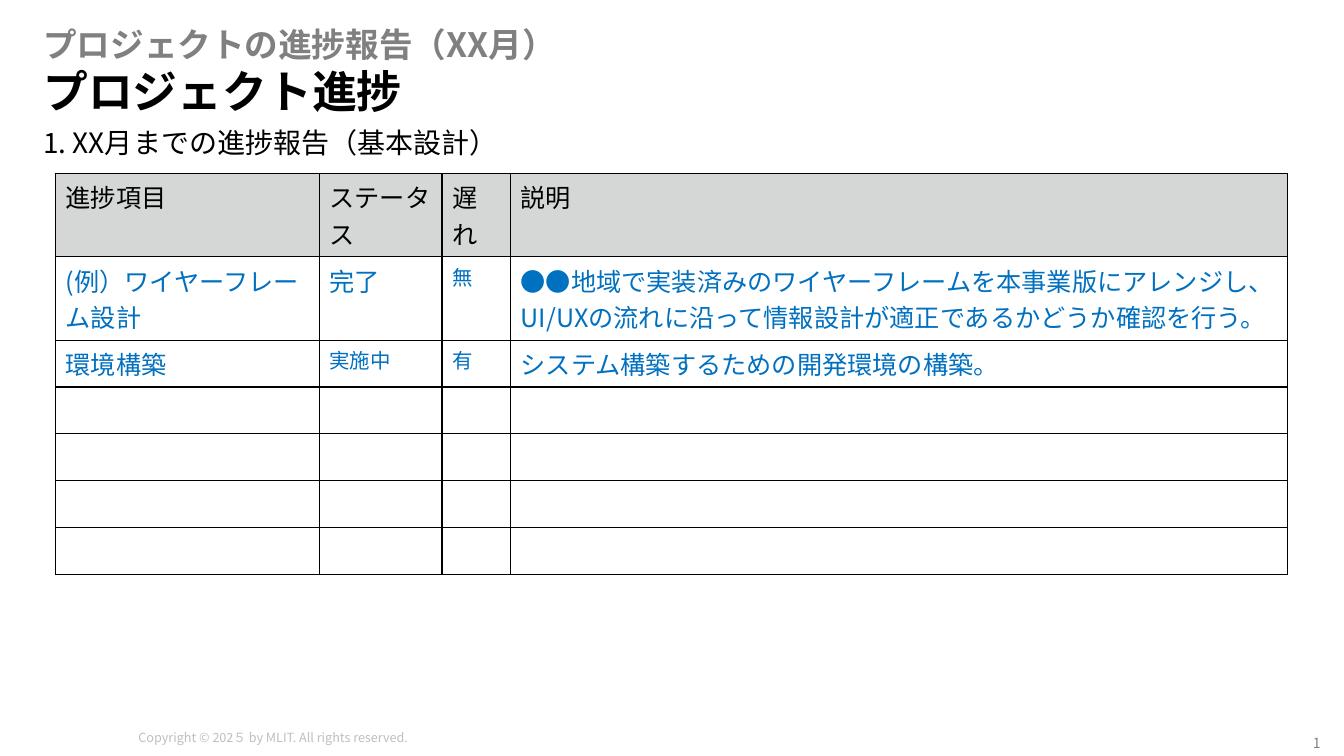
"""Build the monthly project progress report slide."""
from dataclasses import dataclass

from lxml.etree import SubElement
from pptx import Presentation
from pptx.dml.color import RGBColor
from pptx.enum.text import MSO_ANCHOR as Anchor, PP_ALIGN as Align
from pptx.oxml import parse_xml
from pptx.oxml.ns import nsdecls, qn
from pptx.util import Cm, Pt

FONT = "Noto Sans CJK JP"
BLACK = RGBColor(0x00, 0x00, 0x00)
GRAY = RGBColor(0x80, 0x80, 0x80)
LIGHT_GRAY = RGBColor(0xBF, 0xBF, 0xBF)
HEADER_GRAY = RGBColor(0xD5, 0xD7, 0xD7)
BLUE = RGBColor(0x00, 0x70, 0xC0)

LEFT, WIDTH = 0.84, 31.6
TABLE_LEFT, TABLE_TOP = 1.4, 4.37
COLUMN_WIDTHS = (6.65, 3.09, 1.73, 19.57)
ROW_HEIGHTS = (2.1,) * 2 + (1.18,) * 5
BODY_SIZE, SMALL_SIZE = 18, 14.6
SMALL_TEXTS = {"無", "実施中", "有"}
ROWS = [
    ("進捗項目", "ステータス", "遅れ", "説明"),
    ("(例）ワイヤーフレーム設計", "完了", "無",
     "●●地域で実装済みのワイヤーフレームを本事業版にアレンジし、"
     "UI/UXの流れに沿って情報設計が適正であるかどうか確認を行う。"),
    ("環境構築", "実施中", "有", "システム構築するための開発環境の構築。"),
] + [("",) * 4] * 4


@dataclass
class Label:
    """A single-line text with its place in centimetres and its format."""
    text: str
    box: tuple[float, float, float, float]
    size: float
    color: RGBColor
    bold: bool = False
    wrap: bool = True
    anchor: Anchor = Anchor.TOP
    align: Align = Align.LEFT
    insets: tuple[float, float, float, float] = (0.25, 0, 0.25, 0.13)


TITLE = Label("プロジェクト進捗", (LEFT, 1.81, WIDTH, 1.19), 32, BLACK, bold=True,
              anchor=Anchor.MIDDLE, insets=(0.25, 0.13, 0.25, 0.13))
LABELS = [
    Label("プロジェクトの進捗報告（XX月）", (LEFT, 0.61, WIDTH, 1.14), 24, GRAY,
          bold=True, anchor=Anchor.MIDDLE),
    Label("1. XX月までの進捗報告（基本設計）", (LEFT, 3.16, WIDTH, 0.99), 20, BLACK),
    Label("Copyright © 202５ by MLIT. All rights reserved.",
          (3.24, 18.26, 8.81, 0.64), 9, LIGHT_GRAY, wrap=False,
          insets=(0.25, 0.13, 0.25, 0.13)),
    Label("1", (32.79, 18.4, 0.79, 0.64), 10, GRAY, wrap=False,
          align=Align.CENTER, insets=(0.1, 0.1, 0.1, 0.1)),
]


def add_text(p, text: str, size: float, color: RGBColor, bold: bool = False) -> None:
    """Add a formatted run to a paragraph."""
    r = p.add_run()
    r.text = text
    for name, value in {"name": FONT, "size": Pt(size), "bold": bold}.items():
        setattr(r.font, name, value)
    r.font.color.rgb = color
    SubElement(r.font._element, qn("a:ea"), typeface=FONT)


def fill_label(sp, label: Label) -> None:
    """Place a text shape and write its label."""
    for name, value in zip(("left", "top", "width", "height"), label.box):
        setattr(sp, name, Cm(value))
    tf = sp.text_frame
    for side, value in zip(("left", "top", "right", "bottom"), label.insets):
        setattr(tf, f"margin_{side}", Cm(value))
    tf.word_wrap = label.wrap
    tf.vertical_anchor = label.anchor
    p = tf.paragraphs[0]
    p.alignment = label.align
    add_text(p, label.text, label.size, label.color, label.bold)


def set_borders(cell) -> None:
    """Draw a thin black line on each side of a cell."""
    tc_pr = cell._tc.get_or_add_tcPr()
    for index, side in enumerate(("lnL", "lnR", "lnT", "lnB")):
        tc_pr.insert(index, parse_xml(
            f'<a:{side} {nsdecls("a")} w="{Pt(1)}"><a:solidFill>'
            f'<a:srgbClr val="{BLACK}"/></a:solidFill></a:{side}>'))


def fill_cell(cell, text: str, is_header: bool) -> None:
    """Write and format one table cell."""
    p = cell.text_frame.paragraphs[0]
    if text:
        size = SMALL_SIZE if text in SMALL_TEXTS else BODY_SIZE
        add_text(p, text, size, BLACK if is_header else BLUE)
    else:
        end = SubElement(p._p, qn("a:endParaRPr"), sz=str(BODY_SIZE * 100))
        for tag in ("a:latin", "a:ea"):
            SubElement(end, qn(tag), typeface=FONT)
    if is_header:
        cell.fill.solid()
        cell.fill.fore_color.rgb = HEADER_GRAY
    else:
        cell.fill.background()
    set_borders(cell)


def add_progress_table(slide) -> None:
    """Add the table of progress items."""
    table = slide.shapes.add_table(
        len(ROWS), len(COLUMN_WIDTHS), Cm(TABLE_LEFT), Cm(TABLE_TOP),
        Cm(sum(COLUMN_WIDTHS)), Cm(sum(ROW_HEIGHTS))).table
    table.horz_banding = False
    for column, width in zip(table.columns, COLUMN_WIDTHS):
        column.width = Cm(width)
    for i, (row, height, texts) in enumerate(zip(table.rows, ROW_HEIGHTS, ROWS)):
        row.height = Cm(height)
        for cell, text in zip(row.cells, texts):
            fill_cell(cell, text, is_header=i == 0)


def main() -> None:
    """Build and save the slide."""
    prs = Presentation()
    prs.slide_width, prs.slide_height = Cm(33.87), Cm(19.05)
    slide = prs.slides.add_slide(prs.slide_layouts[5])
    title = slide.shapes.title
    fill_label(title, TITLE)
    title.text_frame.paragraphs[0].line_spacing = 0.8
    for label in LABELS:
        fill_label(slide.shapes.add_textbox(0, 0, 0, 0), label)
    add_progress_table(slide)
    prs.save("out.pptx")


if __name__ == "__main__":
    main()
